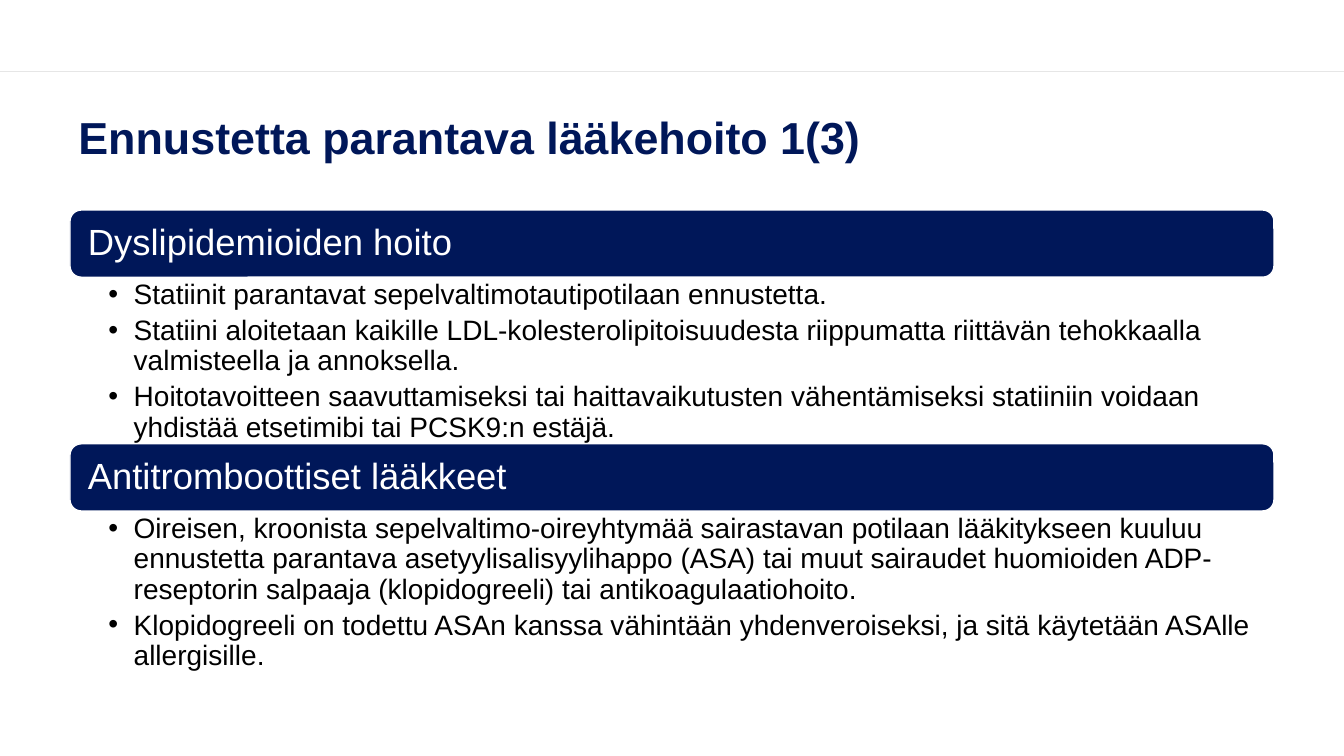
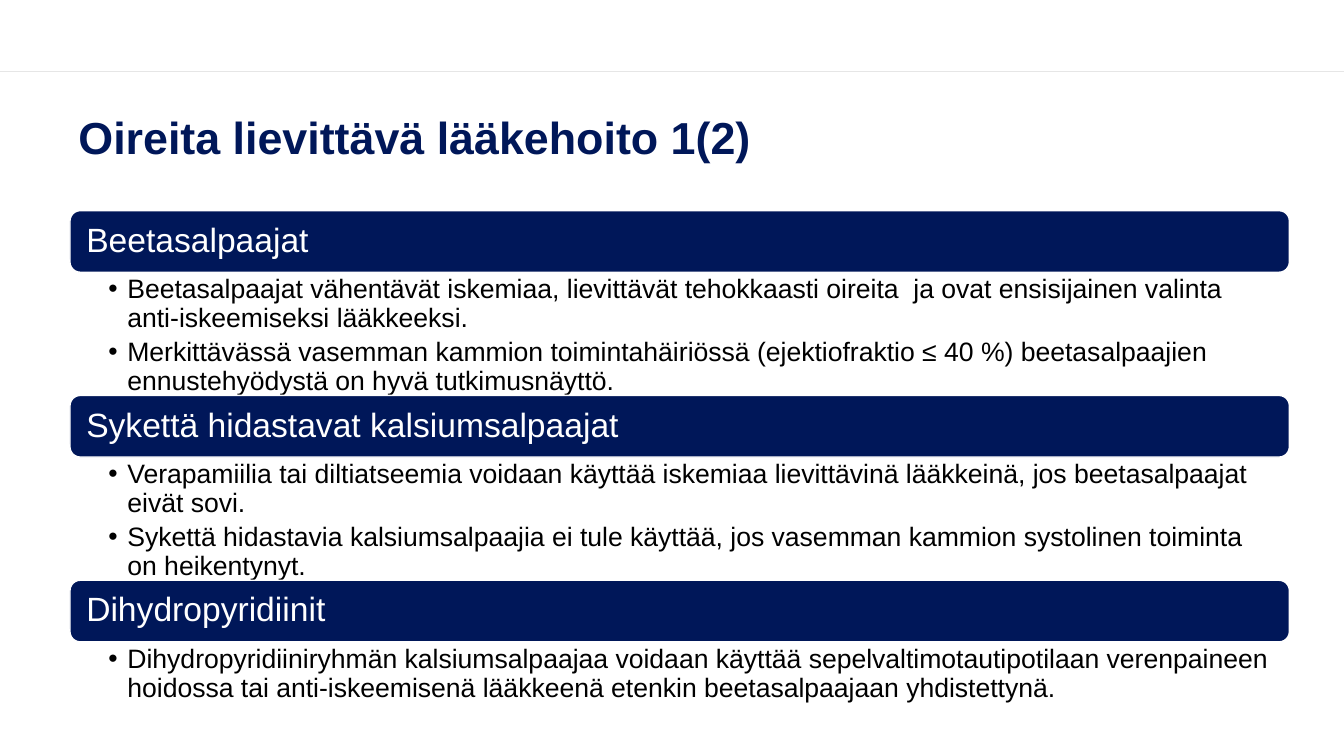
from dataclasses import dataclass

from lxml import etree
from pptx import Presentation
from pptx.dml.color import RGBColor
from pptx.enum.shapes import MSO_CONNECTOR, MSO_SHAPE
from pptx.enum.text import MSO_ANCHOR, MSO_AUTO_SIZE, PP_ALIGN
from pptx.oxml.ns import qn
from pptx.util import Emu, Inches, Pt

LEFT = PP_ALIGN.LEFT
TOP, MIDDLE = MSO_ANCHOR.TOP, MSO_ANCHOR.MIDDLE
FIXED = MSO_AUTO_SIZE.NONE
ROUND, LINE = MSO_SHAPE.ROUNDED_RECTANGLE, MSO_CONNECTOR.STRAIGHT

# Shared look
FONT = "Arial"
NAVY, WHITE, BLACK, GREY = "001759", "FFFFFF", "000000", "E6E6E6"

# Square grid: 192 columns by 108 rows
COLS, ROWS = 192, 108
WIDTH, HEIGHT = Inches(13.33), Inches(7.5)
EDGE = 10


@dataclass
class Topic:
    head: str
    rows: float
    points: list[str]


@dataclass
class Page:
    title: str
    top: float
    cols: float
    bar: float
    pad: float
    dent: float
    large: int
    small: int
    topics: list[Topic]


PAGES = [
    Page("Ennustetta parantava lääkehoito 1(3)", top=30, cols=172, bar=9.6,
         pad=2.1, dent=3.6, large=26, small=20, topics=[
             Topic("Dyslipidemioiden hoito", 23.8, [
                 "Statiinit parantavat sepelvaltimotautipotilaan ennustetta.",
                 "Statiini aloitetaan kaikille LDL-kolesterolipitoisuudesta "
                 "riippumatta riittävän tehokkaalla valmisteella ja "
                 "annoksella.",
                 "Hoitotavoitteen saavuttamiseksi tai haittavaikutusten "
                 "vähentämiseksi statiiniin voidaan yhdistää etsetimibi tai "
                 "PCSK9:n estäjä.",
             ]),
             Topic("Antitromboottiset lääkkeet", 22.9, [
                 "Oireisen, kroonista sepelvaltimo-oireyhtymää sairastavan "
                 "potilaan lääkitykseen kuuluu ennustetta parantava "
                 "asetyylisalisyylihappo (ASA) tai muut sairaudet huomioiden "
                 "ADP-reseptorin salpaaja (klopidogreeli) tai "
                 "antikoagulaatiohoito.",
                 "Klopidogreeli on todettu ASAn kanssa vähintään "
                 "yhdenveroiseksi, ja sitä käytetään ASAlle allergisille.",
             ]),
         ]),
    Page("Oireita lievittävä lääkehoito 1(2)", top=30.1, cols=174.2, bar=8.8,
         pad=1.9, dent=2.7, large=24, small=19, topics=[
             Topic("Beetasalpaajat", 17.6, [
                 "Beetasalpaajat vähentävät iskemiaa, lievittävät tehokkaasti "
                 "oireita  ja ovat ensisijainen valinta anti-iskeemiseksi "
                 "lääkkeeksi.",
                 "Merkittävässä vasemman kammion toimintahäiriössä "
                 "(ejektiofraktio ≤ 40 %) beetasalpaajien ennustehyödystä on "
                 "hyvä tutkimusnäyttö.",
             ]),
             Topic("Sykettä hidastavat kalsiumsalpaajat", 17.6, [
                 "Verapamiilia tai diltiatseemia voidaan käyttää iskemiaa "
                 "lievittävinä lääkkeinä, jos beetasalpaajat eivät sovi.",
                 "Sykettä hidastavia kalsiumsalpaajia ei tule käyttää, jos "
                 "vasemman kammion systolinen toiminta on heikentynyt.",
             ]),
             Topic("Dihydropyridiinit", 8.9, [
                 "Dihydropyridiiniryhmän kalsiumsalpaajaa voidaan käyttää "
                 "sepelvaltimotautipotilaan verenpaineen hoidossa tai "
                 "anti-iskeemisenä lääkkeenä etenkin beetasalpaajaan "
                 "yhdistettynä.",
             ]),
         ]),
]


def tint(code: str) -> RGBColor:
    return RGBColor.from_string(code)


def col(count: float) -> Emu:
    return Emu(round(WIDTH * count / COLS))


def row(count: float) -> Emu:
    return Emu(round(HEIGHT * count / ROWS))


def area(x: float, y: float, wide: float, high: float) -> tuple:
    return col(x), row(y), col(wide), row(high)


def bullet(para, dent: float) -> None:
    """Give a paragraph a round bullet with a hanging indent."""
    props = para._p.get_or_add_pPr()
    props.set("marL", str(col(dent)))
    props.set("indent", str(-col(dent)))
    etree.SubElement(props, qn("a:buFont")).set("typeface", FONT)
    etree.SubElement(props, qn("a:buChar")).set("char", "•")


def write(shape, lines: list[str], *, size: int, color: str,
          bold: bool = False, anchor=MIDDLE, dent: float = 0,
          inset: tuple = (1.4, 0.5, 1.4, 0.5)) -> None:
    """Fill a shape with formatted paragraphs; inset is in grid cells."""
    frame = shape.text_frame
    frame.word_wrap, frame.auto_size = True, FIXED
    frame.vertical_anchor = anchor
    frame.margin_left, frame.margin_right = col(inset[0]), col(inset[2])
    frame.margin_top, frame.margin_bottom = row(inset[1]), row(inset[3])
    for index, line in enumerate(lines):
        para = frame.add_paragraph() if index else frame.paragraphs[0]
        para.alignment, para.line_spacing = LEFT, 0.9
        para.space_before = Pt(size * 0.2 if index else 0)
        if dent:
            bullet(para, dent)
        run = para.add_run()
        run.text = line
        font = run.font
        font.name, font.size, font.bold = FONT, Pt(size), bold
        font.color.rgb = tint(color)


def rule(slide) -> None:
    """Draw the thin line across the top."""
    line = slide.shapes.add_connector(LINE, 0, row(10.2), WIDTH, row(10.2))
    line.line.color.rgb, line.line.width = tint(GREY), Pt(1)
    etree.SubElement(line._element.spPr, qn("a:effectLst"))


def draw(slide, page: Page) -> None:
    """Draw the title, then each bar with its list below."""
    rule(slide)
    write(slide.shapes.title, [page.title], size=32, color=NAVY, bold=True)
    top = page.top
    for topic in page.topics:
        bar = slide.shapes.add_shape(
            ROUND, *area(EDGE, top, page.cols, page.bar))
        bar.shadow.inherit = False
        bar.fill.solid()
        bar.fill.fore_color.rgb = tint(NAVY)
        bar.line.color.rgb, bar.line.width = tint(WHITE), Pt(1)
        write(bar, [topic.head], size=page.large, color=WHITE,
              inset=(page.pad, 0, page.pad, 0))
        top += page.bar
        box = slide.shapes.add_textbox(
            *area(EDGE, top, page.cols, topic.rows))
        write(box, topic.points, size=page.small, color=BLACK, anchor=TOP,
              dent=page.dent, inset=(5.5, 0.5, 2.8, 0.5))
        top += topic.rows


def main() -> None:
    deck = Presentation()
    deck.slide_width, deck.slide_height = WIDTH, HEIGHT
    # Title place, shared through the layout
    layout = deck.slide_layouts.get_by_name("Title Only")
    title = layout.placeholders[0]
    title.left, title.top, title.width, title.height = area(
        9.8, 13.4, 172, 13.1)
    for page in PAGES:
        draw(deck.slides.add_slide(layout), page)
    deck.save("out.pptx")


if __name__ == "__main__":
    main()
